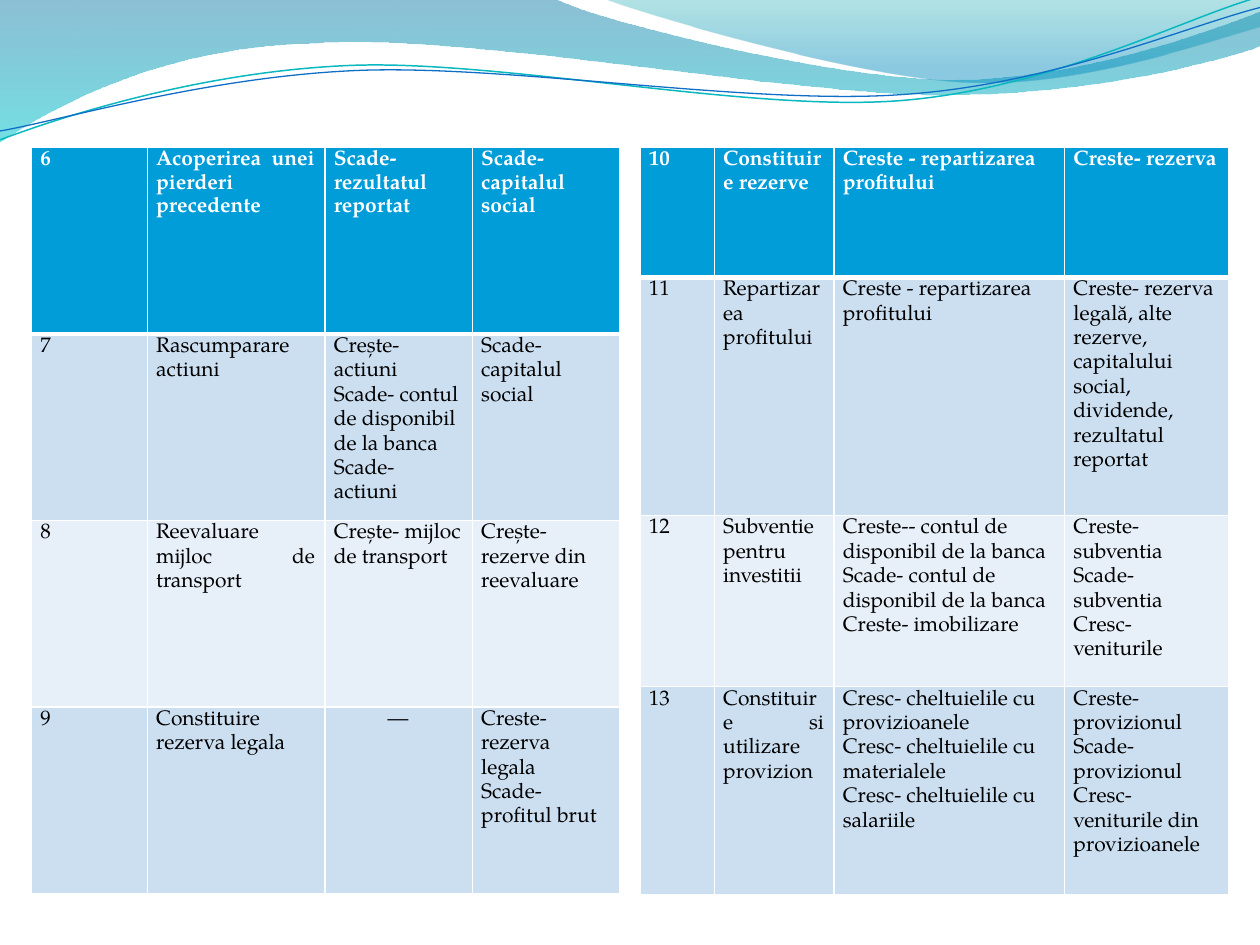
import math

from lxml import etree
from pptx import Presentation
from pptx import util as u
from pptx.dml.color import RGBColor
from pptx.enum import lang, text
from pptx.oxml import ns

C = {"header": "009DD9", "band": "CCDFF1", "light": "E7EFF8", "white": "FFFFFF",
     "black": "000000", "teal": "0AB8BF", "blue": "0F6FC6"}
FONT = "TeX Gyre Pagella"
ALIGN = {"j": text.PP_ALIGN.JUSTIFY, "l": text.PP_ALIGN.LEFT, "c": text.PP_ALIGN.CENTER}
TILT = 2.7  # degrees the thin waves are turned anticlockwise

prs = Presentation()
prs.slide_width, prs.slide_height = u.Inches(10), u.Inches(7.5)
s = prs.slides.add_slide(prs.slide_layouts[6])


def add_wave(segments, closed):
    """Draw lines (2 numbers) and Bezier curves (6 numbers) as one outline."""
    segments = [[u.Inches(v) for v in seg] for seg in segments]
    ends = [seg[-2:] for seg in segments]
    fb = s.shapes.build_freeform(*ends[0], scale=1)
    fb.add_line_segments(ends[1:], close=closed)
    sp = fb.convert_to_shape()
    sp.shadow.inherit = False
    left, top = min(x for x, y in ends), min(y for x, y in ends)
    for ln, seg in zip(list(sp._element.iter(ns.qn("a:lnTo"))), segments[1:]):
        if len(seg) == 6:
            ln.tag = ns.qn("a:cubicBezTo")
            for pt in list(ln):
                ln.remove(pt)
            for x, y in zip(seg[::2], seg[1::2]):
                etree.SubElement(ln, ns.qn("a:pt"), x=str(x - left), y=str(y - top))
    return sp


def set_border(cell, side, width):
    ln = etree.SubElement(cell._tc.get_or_add_tcPr(), ns.qn(f"a:ln{side}"),
                          w=str(u.Pt(width)))
    fill = etree.SubElement(ln, ns.qn("a:solidFill"))
    etree.SubElement(fill, ns.qn("a:srgbClr"), val=C["white"])


# Filled waves: outline, then gradient stops (position, colour, opacity %)
filled = [
    ([(0, 0), (4.4, -0.01), (4.76, 0.17, 6.64, 0.63, 7.58, 0.63),
      (8.53, 0.63, 9.58, 0.26, 10, 0.09), (10.01, 0.36),
      (9.83, 0.44, 8.7, 0.76, 7.46, 0.75), (6.22, 0.75, 3.82, 0.28, 2.57, 0.34),
      (1.29, 0.36, 0.46, 0.83, -0.01, 1.13)],
     [(0, "0074A1", 45), (1, "00C6CF", 55)]),
    ([(4.79, -0.01), (5.09, 0.11, 6.82, 0.62, 7.69, 0.65),
      (8.56, 0.69, 9.61, 0.32, 10, 0.21), (10, 0)],
     [(0, "00A1A9", 30), (0.8, "008BBF", 45)]),
]
for outline, stops in filled:
    sp = add_wave(outline, True)
    sp.line.fill.background()
    sp.fill.gradient()
    sp.fill.gradient_angle = 270
    for stop, (pos, color, opacity) in zip(sp.fill.gradient_stops, stops):
        stop.position = pos
        stop.color.rgb = RGBColor.from_string(color)
    for clr, (pos, color, opacity) in zip(sp._element.spPr.iter(ns.qn("a:srgbClr")), stops):
        etree.SubElement(clr, ns.qn("a:alpha"), val=str(opacity * 1000))

# Thin wave lines: outline as seen, centre of turn, colour, width
lines = [
    ([(0, 1.11), (0.48, 0.93, 1.58, 0.57, 2.77, 0.52),
      (3.95, 0.47, 5.93, 0.89, 7.13, 0.8), (8.33, 0.71, 9.38, 0.15, 9.98, -0.02)],
     (4.99, 0.57), "teal", 0.85),
    ([(0, 1.04), (0.47, 0.96, 1.64, 0.61, 2.83, 0.56),
      (4.03, 0.51, 5.97, 0.84, 7.17, 0.75), (8.36, 0.67, 9.41, 0.21, 10, 0.06)],
     (5, 0.59), "blue", 0.75),
]
cos, sin = math.cos(math.radians(TILT)), math.sin(math.radians(TILT))
for outline, (cx, cy), color, width in lines:
    level = []
    for seg in outline:
        level.append([v for x, y in zip(seg[::2], seg[1::2])
                      for v in (cx + (x - cx) * cos - (y - cy) * sin,
                                cy + (x - cx) * sin + (y - cy) * cos)])
    sp = add_wave(level, False)
    sp.rotation = 360 - TILT
    sp.fill.background()
    sp.line.color.rgb = RGBColor.from_string(C[color])
    sp.line.width = u.Pt(width)

# Tables: each paragraph starts with its alignment, "|" parts paragraphs
tables = [
    (0.25, [0.92, 1.41, 1.17, 1.17], [1.48] * 4, [
        ["j:6", "j:Acoperirea unei pierderi precedente",
         "l:Scade- rezultatul reportat", "j:Scade- capitalul social"],
        ["j:7", "j:Rascumparare actiuni",
         "j:Creşte- actiuni|l:Scade- contul de disponibil de la banca|l:Scade- actiuni",
         "j:Scade- capitalul social"],
        ["j:8", "j:Reevaluare mijloc de transport",
         "l:Creşte- mijloc de transport", "l:Creşte-rezerve din reevaluare"],
        ["j:9", "j:Constituire rezerva legala", "c:―",
         "j:Creste-rezerva legala|j:Scade- profitul brut"],
    ]),
    (5.08, [0.59, 0.95, 1.83, 1.3], [1.03, 1.89, 1.36, 1.65], [
        ["j:10", "j:Constituire rezerve",
         "l:Creste - repartizarea profitului", "j:Creste- rezerva"],
        ["j:11", "j:Repartizarea profitului", "l:Creste - repartizarea profitului",
         "l:Creste- rezerva legală, alte rezerve, capitalului social, dividende, "
         "rezultatul reportat"],
        ["j:12", "j:Subventie pentru investitii",
         "l:Creste-- contul de disponibil de la banca"
         "|l:Scade- contul de disponibil de la banca|l:Creste- imobilizare",
         "j:Creste- subventia|j:Scade- subventia|l:Cresc- veniturile"],
        ["j:13", "j:Constituire si utilizare provizion",
         "l:Cresc- cheltuielile cu provizioanele|l:Cresc- cheltuielile cu materialele"
         "|l:Cresc- cheltuielile cu salariile",
         "j:Creste- provizionul|j:Scade- provizionul|l:Cresc- veniturile din provizioanele"],
    ]),
]
row_fills = ["header", "band", "light", "band"]
for left, widths, heights, rows in tables:
    tbl = s.shapes.add_table(len(rows), len(widths), u.Inches(left), u.Inches(1.17),
                             u.Inches(sum(widths)), u.Inches(sum(heights))).table
    for col, w in zip(tbl.columns, widths):
        col.width = u.Inches(w)
    for r, row in enumerate(rows):
        tbl.rows[r].height = u.Inches(heights[r])
        for c, content in enumerate(row):
            cell = tbl.cell(r, c)
            cell.margin_left, cell.margin_right = u.Inches(0.07), u.Inches(0.08)
            cell.margin_top = cell.margin_bottom = 0
            for side in "LRTB":
                thick = (r, side) in [(0, "B"), (1, "T")]
                set_border(cell, side, 3 if thick else 1)
            cell.fill.solid()
            cell.fill.fore_color.rgb = RGBColor.from_string(C[row_fills[r]])
            tf = cell.text_frame
            for i, part in enumerate(content.split("|")):
                p = tf.add_paragraph() if i else tf.paragraphs[0]
                align, p.text = part.split(":", 1)
                p.alignment = ALIGN[align]
                p.line_spacing = 1.15
                p.font.name, p.font.size, p.font.bold = FONT, u.Pt(12), r == 0
                p.font.color.rgb = RGBColor.from_string(C["black" if r else "white"])
                p.runs[0].font.language_id = lang.MSO_LANGUAGE_ID.ROMANIAN
                if c == 0:  # hanging indent of the row numbers
                    pPr = p._p.get_or_add_pPr()
                    pPr.set("marL", str(u.Inches(0.38)))
                    pPr.set("indent", str(-u.Inches(0.38)))

prs.save("out.pptx")
